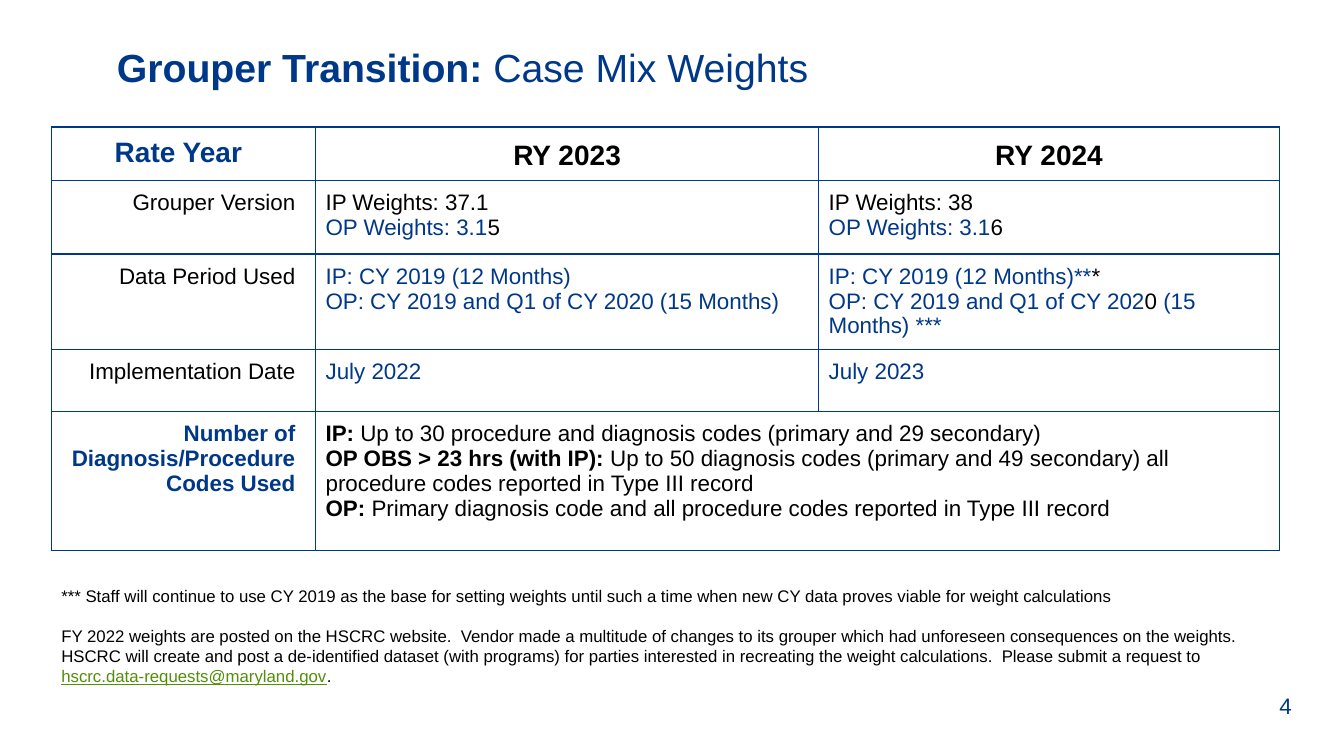
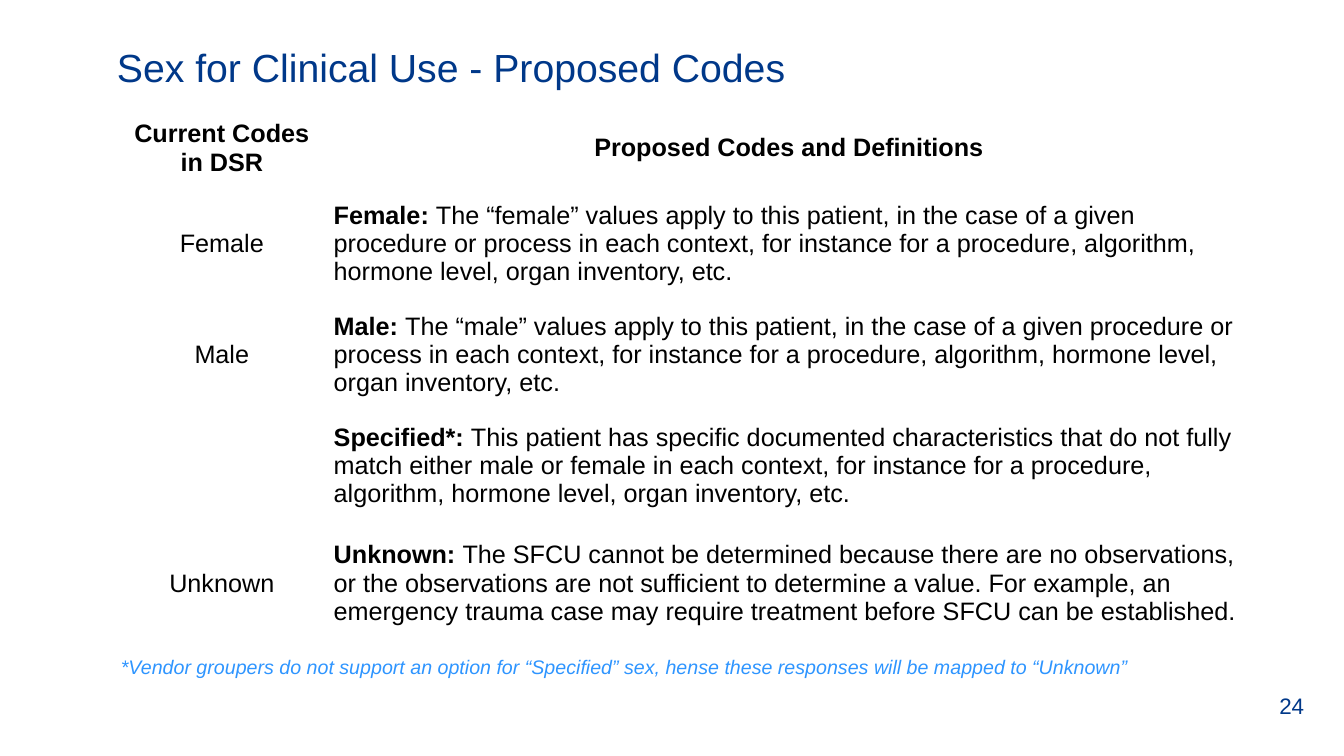
"""Build two slides on grouper weights and clinical sex codes."""
from lxml import etree
from pptx import Presentation
from pptx.dml.color import RGBColor
from pptx.enum.text import MSO_ANCHOR, MSO_AUTO_SIZE, PP_ALIGN
from pptx.oxml.ns import qn
from pptx.util import Inches, Pt

LEFT, CENTER, RIGHT = PP_ALIGN.LEFT, PP_ALIGN.CENTER, PP_ALIGN.RIGHT
TOP, MIDDLE = MSO_ANCHOR.TOP, MSO_ANCHOR.MIDDLE
NAVY = RGBColor(0x00, 0x38, 0x89)
BLACK = RGBColor(0x00, 0x00, 0x00)
GREEN = RGBColor(0x53, 0x8E, 0x09)
SKY = RGBColor(0x2E, 0x95, 0xFF)
FONT = "Arial"


def write(frame, lines, size, align=LEFT):
    """Write lines of (text, colour, bold) spans into a text frame."""
    for index, spans in enumerate(lines):
        para = frame.add_paragraph() if index else frame.paragraphs[0]
        para.alignment = align
        _, colour, bold = spans[0]
        para.font.name, para.font.size = FONT, Pt(size)
        para.font.color.rgb, para.font.bold = colour, bold
        for text, span_colour, span_bold in spans:
            span = para.add_run()
            span.text = text
            if span_colour != colour:
                span.font.color.rgb = span_colour
            if span_bold != bold:
                span.font.bold = span_bold


def add_grid(page, left, top, widths, heights, border=None):
    """Add an unfilled table, with ruled cells when a border colour is given."""
    table = page.shapes.add_table(
        len(heights), len(widths), Inches(left), Inches(top),
        Inches(sum(widths)), Inches(sum(heights))).table
    table.first_row = table.horz_banding = False
    for column, width in zip(table.columns, widths):
        column.width = Inches(width)
    for row, height in zip(table.rows, heights):
        row.height = Inches(height)
    for cell in table.iter_cells():
        if border is not None:
            properties = cell._tc.get_or_add_tcPr()
            for side in ("a:lnL", "a:lnR", "a:lnT", "a:lnB"):
                line = etree.SubElement(properties, qn(side), w=str(Pt(1)))
                fill = etree.SubElement(line, qn("a:solidFill"))
                etree.SubElement(fill, qn("a:srgbClr"), val=str(border))
        cell.fill.background()
    return table


deck = Presentation()
deck.slide_width, deck.slide_height = Inches(13.33), Inches(7.5)
layout = deck.slide_layouts[5]
heading = layout.placeholders[0]
heading.left, heading.top = Inches(1.06), Inches(0.38)
heading.width, heading.height = Inches(11.5), Inches(0.66)
heading.text_frame.vertical_anchor = TOP
heading.text_frame.auto_size = MSO_AUTO_SIZE.NONE

titles = [
    ("4", [("Grouper Transition: ", NAVY, True), ("Case Mix Weights", NAVY, False)]),
    ("24", [("Sex for Clinical Use - Proposed Codes", NAVY, False)]),
]
pages = []
for number, title in titles:
    page = deck.slides.add_slide(layout)
    write(page.shapes.title.text_frame, [title], 28)
    box = page.shapes.add_textbox(Inches(12.59), Inches(6.8), Inches(0.63), Inches(0.4))
    box.text_frame.word_wrap = True
    box.text_frame.vertical_anchor = MIDDLE
    write(box.text_frame, [[(number, NAVY, False)]], 16)
    pages.append(page)
weights_page, codes_page = pages

weights_rows = [
    [[[("Rate Year", NAVY, True)]],
     [[("RY 2023", BLACK, True)]],
     [[("RY 2024", BLACK, True)]]],
    [[[("Grouper Version", BLACK, False)]],
     [[("IP Weights: 37.1", BLACK, False)],
      [("OP Weights: 3.1", NAVY, False), ("5", BLACK, False)]],
     [[("IP Weights: 38", BLACK, False)],
      [("OP Weights: 3.1", NAVY, False), ("6", BLACK, False)]]],
    [[[("Data Period Used", BLACK, False)]],
     [[("IP: CY 2019 (12 Months)", NAVY, False)],
      [("OP: CY 2019 and Q1 of CY 2020 (15 Months)", NAVY, False)]],
     [[("IP: CY 2019 (12 Months)**", NAVY, False), ("*", BLACK, False)],
      [("OP: CY 2019 and Q1 of CY 202", NAVY, False), ("0", BLACK, False),
       (" (15 Months) ***", NAVY, False)]]],
    [[[("Implementation Date", BLACK, False)]],
     [[("July 2022", NAVY, False)]],
     [[("July 2023", NAVY, False)]]],
    [[[("Number of Diagnosis/Procedure Codes Used", NAVY, True)]],
     [[("IP: ", BLACK, True),
       ("Up to 30 procedure and diagnosis codes (primary and 29 secondary)", BLACK, False)],
      [("OP OBS > 23 hrs (with IP): ", BLACK, True),
       ("Up to 50 diagnosis codes (primary and 49 secondary) all procedure codes "
        "reported in Type III record", BLACK, False)],
      [("OP: ", BLACK, True),
       ("Primary diagnosis code and all procedure codes reported in Type III record",
        BLACK, False)]]],
]
weights = add_grid(weights_page, 0.51, 1.26, [2.62, 4.99, 4.57],
                   [0.53, 0.73, 0.94, 0.61, 1.38], NAVY)
weights.cell(4, 1).merge(weights.cell(4, 2))
for row, entries in enumerate(weights_rows):
    for column, lines in enumerate(entries):
        cell = weights.cell(row, column)
        cell.margin_left = cell.margin_top = Inches(0.1)
        cell.margin_right = Inches(0.1 if column else 0.2)
        cell.margin_bottom = Inches(0.05)
        cell.vertical_anchor = MIDDLE if row == 0 and column else TOP
        align = CENTER if row == 0 else LEFT if column else RIGHT
        write(cell.text_frame, lines, 16 if row else 20, align)

box = weights_page.shapes.add_textbox(Inches(0.51), Inches(5.76), Inches(12.05), Inches(1.13))
box.text_frame.word_wrap = True
write(box.text_frame, [
    [("*** Staff will continue to use CY 2019 as the base for setting weights until such "
      "a time when new CY data proves viable for weight calculations", BLACK, False)],
    [("FY 2022 weights are posted on the HSCRC website.  Vendor made a multitude of changes to "
      "its grouper which had unforeseen consequences on the weights. HSCRC will create and "
      "post a de-identified dataset (with programs) for parties interested in recreating the "
      "weight calculations.  Please submit a request to ", BLACK, False),
     ("hscrc.data-requests@maryland.gov", GREEN, False), (".", BLACK, False)],
], 12)
request = box.text_frame.paragraphs[1]
request.space_before = Pt(14)
request.runs[1].font.underline = True

codes_rows = [
    ("Female", "Female: ",
     "The “female” values apply to this patient, in the case of a given procedure or process "
     "in each context, for instance for a procedure, algorithm, hormone level, organ "
     "inventory, etc."),
    ("Male", "Male: ",
     "The “male” values apply to this patient, in the case of a given procedure or process "
     "in each context, for instance for a procedure, algorithm, hormone level, organ "
     "inventory, etc."),
    ("", "Specified*: ",
     "This patient has specific documented characteristics that do not fully match either "
     "male or female in each context, for instance for a procedure, algorithm, hormone "
     "level, organ inventory, etc."),
    ("Unknown", "Unknown: ",
     "The SFCU cannot be determined because there are no observations, or the observations "
     "are not sufficient to determine a value. For example, an emergency trauma case may "
     "require treatment before SFCU can be established."),
]
codes = add_grid(codes_page, 1.19, 1.07, [2.02, 9.23], [0.79, 1.1, 1.1, 1.1, 1.23])
for cell in codes.iter_cells():
    cell.vertical_anchor = MIDDLE
    cell.margin_left = cell.margin_right = Inches(0.1)
    cell.margin_top = cell.margin_bottom = Inches(0.1)
for column, label in enumerate(["Current Codes in DSR", "Proposed Codes and Definitions"]):
    write(codes.cell(0, column).text_frame, [[(label, BLACK, True)]], 18, CENTER)
for row, (current, term, definition) in enumerate(codes_rows, 1):
    if current:
        write(codes.cell(row, 0).text_frame, [[(current, BLACK, False)]], 18, CENTER)
    write(codes.cell(row, 1).text_frame,
          [[(term, BLACK, True), (definition, BLACK, False)]], 18)

box = codes_page.shapes.add_textbox(Inches(1.1), Inches(6.4), Inches(10.67), Inches(0.44))
box.text_frame.word_wrap = True
box.text_frame.margin_top = box.text_frame.margin_bottom = Inches(0.1)
write(box.text_frame, [[(
    "*Vendor groupers do not support an option for “Specified” sex, hense these responses "
    "will be mapped to “Unknown”", SKY, False)]], 14)
box.text_frame.paragraphs[0].font.italic = True

deck.save("out.pptx")
